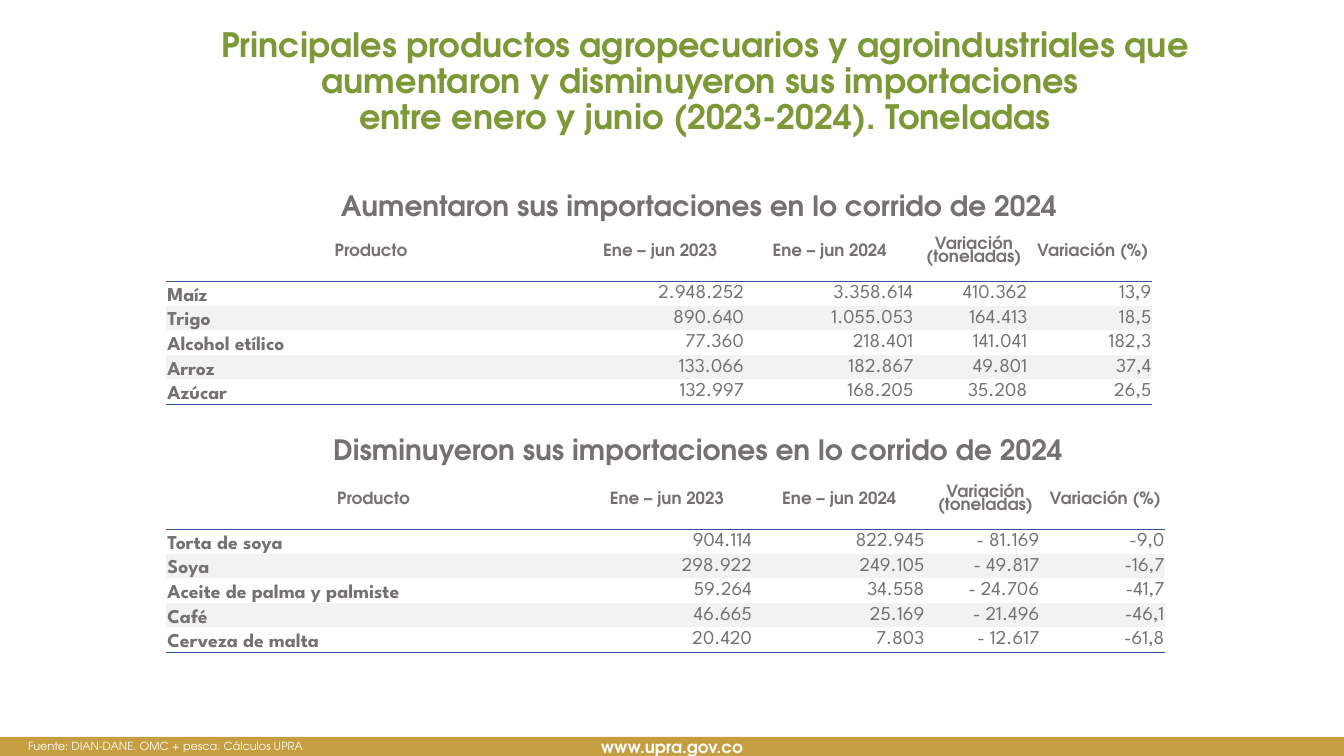
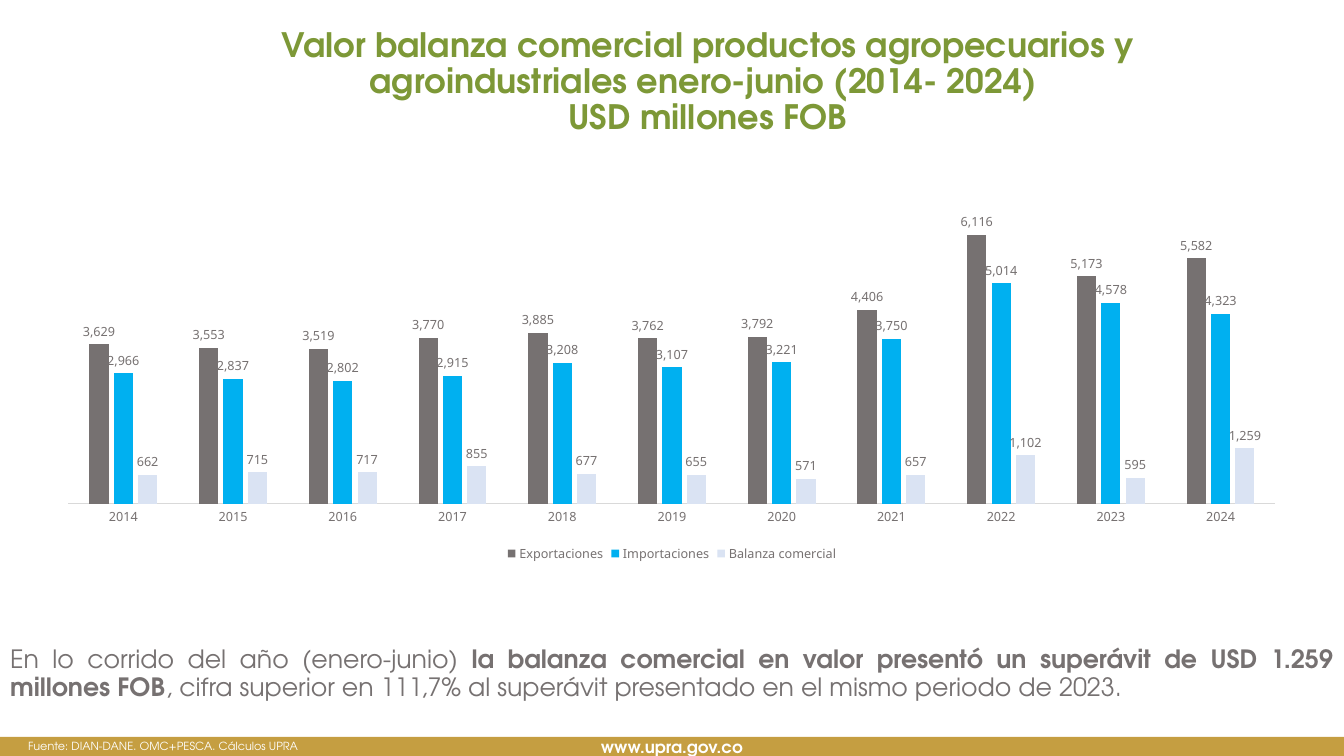
from lxml import etree
from pptx import Presentation
from pptx.chart.data import CategoryChartData
from pptx.dml.color import RGBColor
from pptx.enum.chart import XL_CHART_TYPE, XL_LABEL_POSITION, XL_LEGEND_POSITION, XL_TICK_MARK
from pptx.enum.shapes import MSO_SHAPE
from pptx.enum.text import MSO_ANCHOR, MSO_AUTO_SIZE, PP_ALIGN
from pptx.oxml.ns import qn
from pptx.util import Inches, Pt

LEFT, CENTER, RIGHT, JUSTIFY = PP_ALIGN.LEFT, PP_ALIGN.CENTER, PP_ALIGN.RIGHT, PP_ALIGN.JUSTIFY
TOP, MIDDLE, BOTTOM = MSO_ANCHOR.TOP, MSO_ANCHOR.MIDDLE, MSO_ANCHOR.BOTTOM
COLUMNS = XL_CHART_TYPE.COLUMN_CLUSTERED
OUTSIDE = XL_LABEL_POSITION.OUTSIDE_END
UNDER = XL_LEGEND_POSITION.BOTTOM
NO_TICK = XL_TICK_MARK.NONE
NO_FIT = MSO_AUTO_SIZE.NONE
RECT = MSO_SHAPE.RECTANGLE

COLORS = {
    "green": "7D9837", "gold": "C59E41", "white": "FFFFFF", "gray": "767171",
    "cell": "757171", "stripe": "F2F2F2", "rule": "2F5597", "axis": "D9D9D9",
    "blue": "00B0F0", "pale": "DAE3F3",
}
MAIN, DATA, CHART = "TeX Gyre Adventor", "League Spartan", "Noto Sans"
WIDE, HIGH = 13.33, 7.5
PLAIN_GRID = "{2D5ABB26-0587-4C30-8999-92F81FD0307C}"
NUMBER = '_-* #,##0_-;\\-* #,##0_-;_-* "-"??_-;_-@_'

HEAD = ["Producto", "Ene – jun 2023", "Ene – jun 2024", "Variación (toneladas)", "Variación (%)"]
GAINS = [
    ["Maíz", "2.948.252", "3.358.614", "410.362", "13,9"],
    ["Trigo", "890.640", "1.055.053", "164.413", "18,5"],
    ["Alcohol etílico", "77.360", "218.401", "141.041", "182,3"],
    ["Arroz", "133.066", "182.867", "49.801", "37,4"],
    ["Azúcar", "132.997", "168.205", "35.208", "26,5"],
]
DROPS = [
    ["Torta de soya", "904.114", "822.945", "- 81.169", "-9,0"],
    ["Soya", "298.922", "249.105", "- 49.817", "-16,7"],
    ["Aceite de palma y palmiste", "59.264", "34.558", "- 24.706", "-41,7"],
    ["Café", "46.665", "25.169", "- 21.496", "-46,1"],
    ["Cerveza de malta", "20.420", "7.803", "- 12.617", "-61,8"],
]
YEARS = [str(year) for year in range(2014, 2025)]
SERIES = [
    ("Exportaciones", "gray", [3629, 3553, 3519, 3770, 3885, 3762, 3792, 4406, 6116, 5173, 5582]),
    ("Importaciones", "blue", [2966, 2837, 2802, 2915, 3208, 3107, 3221, 3750, 5014, 4578, 4323]),
    ("Balanza comercial", "pale", [662, 715, 717, 855, 677, 655, 571, 657, 1102, 595, 1259]),
]


def rgb(name):
    return RGBColor.from_string(COLORS[name])


def style(font, size, color, bold=False, face=MAIN):
    font.size, font.bold, font.name = Pt(size), bold, face
    font.color.rgb = rgb(color)


def write(frame, text, size, color, bold=False, align=CENTER, face=MAIN, space=None):
    frame.text = text
    for par in frame.paragraphs:
        par.alignment = align
        par.line_spacing = space
        for run in par.runs:
            style(run.font, size, color, bold, face)


def place(shape, box):
    shape.left, shape.top, shape.width, shape.height = map(Inches, box)


def prepare(frame):
    """Makes a placeholder frame wrap from the top at a fixed size."""
    frame.word_wrap, frame.auto_size = True, NO_FIT
    frame.vertical_anchor = TOP


def add_title(slide, box, text):
    title = slide.shapes.title
    place(title, box)
    prepare(title.text_frame)
    write(title.text_frame, text, 24, "green", True, space=0.9)


def add_text(slide, box, text, *look, **more):
    frame = slide.shapes.add_textbox(*map(Inches, box)).text_frame
    frame.word_wrap = True
    write(frame, text, *look, **more)


def add_source(slide, text):
    add_text(slide, (0.18, 7.29, 12.91, 0.24), text, 8, "white", align=JUSTIFY)


def add_band(prs, slide):
    """Draws the web band and hands it to the master."""
    box = (0, 7.31, WIDE, 0.19)
    band = slide.shapes.add_shape(RECT, *map(Inches, box))
    band.shadow.inherit = False
    band.fill.solid()
    band.fill.fore_color.rgb = rgb("gold")
    band.line.fill.background()
    band.text_frame.vertical_anchor = MIDDLE
    write(band.text_frame, "www.upra.gov.co", 12, "white", True)
    prs.slide_master.shapes.element.append(band.element)


def underline(cell):
    line = etree.Element(qn("a:lnB"), w=str(Pt(0.25)))
    fill = etree.SubElement(line, qn("a:solidFill"))
    etree.SubElement(fill, qn("a:srgbClr"), val=COLORS["rule"])
    cell._tc.get_or_add_tcPr().insert(0, line)


def fill_cell(cell, row, col, text, last):
    cell.margin_left = cell.margin_top = Inches(0.01)
    cell.margin_right = Inches(0.06 if row and col == 3 else 0.01)
    cell.margin_bottom = 0
    cell.vertical_anchor = BOTTOM if row and not col else MIDDLE
    if row and row % 2 == 0:
        cell.fill.solid()
        cell.fill.fore_color.rgb = rgb("stripe")
    else:
        cell.fill.background()
    if row in (0, last):
        underline(cell)
    if row == 0:
        write(cell.text_frame, text, 12, "gray", True, space=0.8)
    else:
        write(cell.text_frame, text, 14, "cell", col == 0, RIGHT if col else LEFT, DATA)


def add_grid(slide, left, top, widths, body):
    rows = [HEAD] + body
    heights = [0.58] + [0.24] * len(body)
    box = (left, top, sum(widths), sum(heights))
    table = slide.shapes.add_table(len(rows), len(HEAD), *map(Inches, box)).table
    table.first_row = table.horz_banding = False
    table._tbl.tblPr.find(qn("a:tableStyleId")).text = PLAIN_GRID
    for col, width in zip(table.columns, widths):
        col.width = Inches(width)
    for r, (texts, height) in enumerate(zip(rows, heights)):
        table.rows[r].height = Inches(height)
        for c, text in enumerate(texts):
            fill_cell(table.cell(r, c), r, c, text, len(body))


def add_bars(slide, box):
    data = CategoryChartData(number_format=NUMBER)
    data.categories = YEARS
    for name, _, values in SERIES:
        data.add_series(name, values)
    chart = slide.shapes.add_chart(COLUMNS, *map(Inches, box), data).chart
    style(chart.font, 9, "gray", face=CHART)
    chart.has_title = False
    chart.has_legend = True
    chart.legend.position = UNDER
    chart.legend.include_in_layout = False
    style(chart.legend.font, 9, "gray", face=CHART)

    years = chart.category_axis
    years.major_tick_mark = years.minor_tick_mark = NO_TICK
    years.format.line.color.rgb = rgb("axis")
    years.format.line.width = Pt(0.75)
    style(years.tick_labels.font, 9, "gray", face=CHART)
    chart.value_axis.visible = False
    chart.value_axis.has_major_gridlines = False

    plot = chart.plots[0]
    plot.gap_width, plot.overlap = 219, -27
    plot.vary_by_categories = False
    for bars, (_, color, _) in zip(plot.series, SERIES):
        bars.format.fill.solid()
        bars.format.fill.fore_color.rgb = rgb(color)
        bars.invert_if_negative = False
        labels = bars.data_labels
        labels.show_value = True
        labels.position = OUTSIDE
        labels.number_format, labels.number_format_is_linked = NUMBER, False
        style(labels.font, 9, "gray", face=CHART)


def add_note(slide, box, parts):
    """Fills the body placeholder from (text, bold) parts."""
    body = slide.placeholders[1]
    place(body, box)
    prepare(body.text_frame)
    par = body.text_frame.paragraphs[0]
    props = par._p.get_or_add_pPr()
    props.set("marL", "0")
    props.set("indent", "0")
    etree.SubElement(props, qn("a:buNone"))
    par.alignment, par.line_spacing, par.space_before = JUSTIFY, 0.9, Pt(0)
    for text, bold in parts:
        run = par.add_run()
        run.text = text
        style(run.font, 18, "gray", bold)


def build_trade(prs):
    slide = prs.slides.add_slide(prs.slide_layouts[5])
    add_band(prs, slide)
    add_title(slide, (2.07, 0.23, 9.84, 1.07),
              "Principales productos agropecuarios y agroindustriales que aumentaron y "
              "disminuyeron sus importaciones \ventre enero y junio (2023-2024). Toneladas")
    add_source(slide, "Fuente: DIAN-DANE. OMC + pesca. Cálculos UPRA")
    add_text(slide, (2.18, 1.82, 9.51, 0.44),
             "Aumentaron sus importaciones en lo corrido de 2024", 20, "gray", True)
    add_grid(slide, 1.65, 2.21, [4.06, 1.68, 1.68, 1.18, 1.18], GAINS)
    add_text(slide, (1.78, 4.24, 10.29, 0.44),
             "Disminuyeron sus importaciones en lo corrido de 2024", 20, "gray", True)
    add_grid(slide, 1.65, 4.67, [4.11, 1.71, 1.71, 1.19, 1.19], DROPS)


def build_balance(prs):
    slide = prs.slides.add_slide(prs.slide_layouts[1])
    add_title(slide, (2.44, 0.23, 9.16, 1.07),
              "Valor balanza comercial productos agropecuarios y agroindustriales "
              "enero-junio (2014- 2024) \vUSD millones FOB")
    add_source(slide, "Fuente: DIAN-DANE. OMC+PESCA. Cálculos UPRA")
    add_note(slide, (0, 6.37, WIDE, 0.93), [
        ("En lo corrido del año (enero-junio) ", False),
        ("la balanza comercial en valor presentó un superávit de USD 1.259 millones FOB", True),
        (", cifra superior en 111,7% al superávit presentado en el mismo periodo de 2023.", False),
    ])
    add_bars(slide, (0.43, 1.87, 12.47, 3.75))


def main():
    prs = Presentation()
    prs.slide_width, prs.slide_height = Inches(WIDE), Inches(HIGH)
    build_trade(prs)
    build_balance(prs)
    prs.save("out.pptx")


if __name__ == "__main__":
    main()
